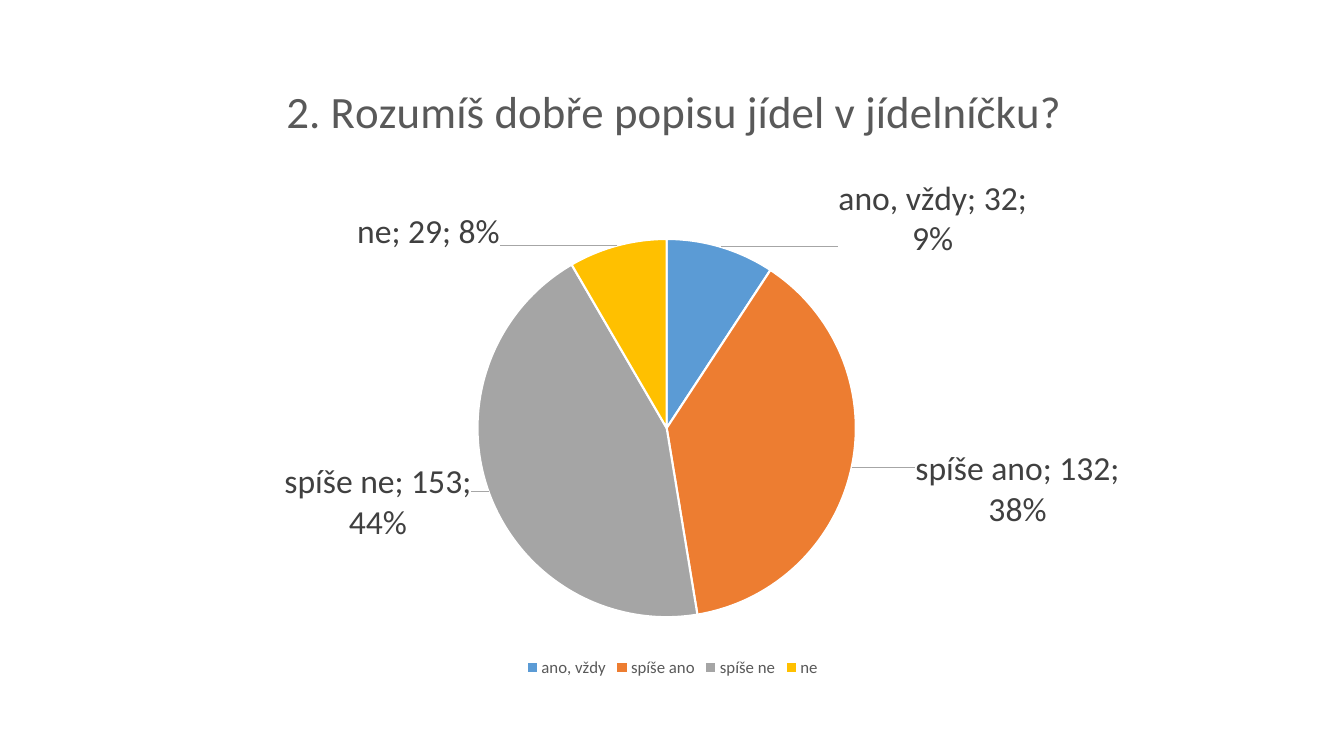
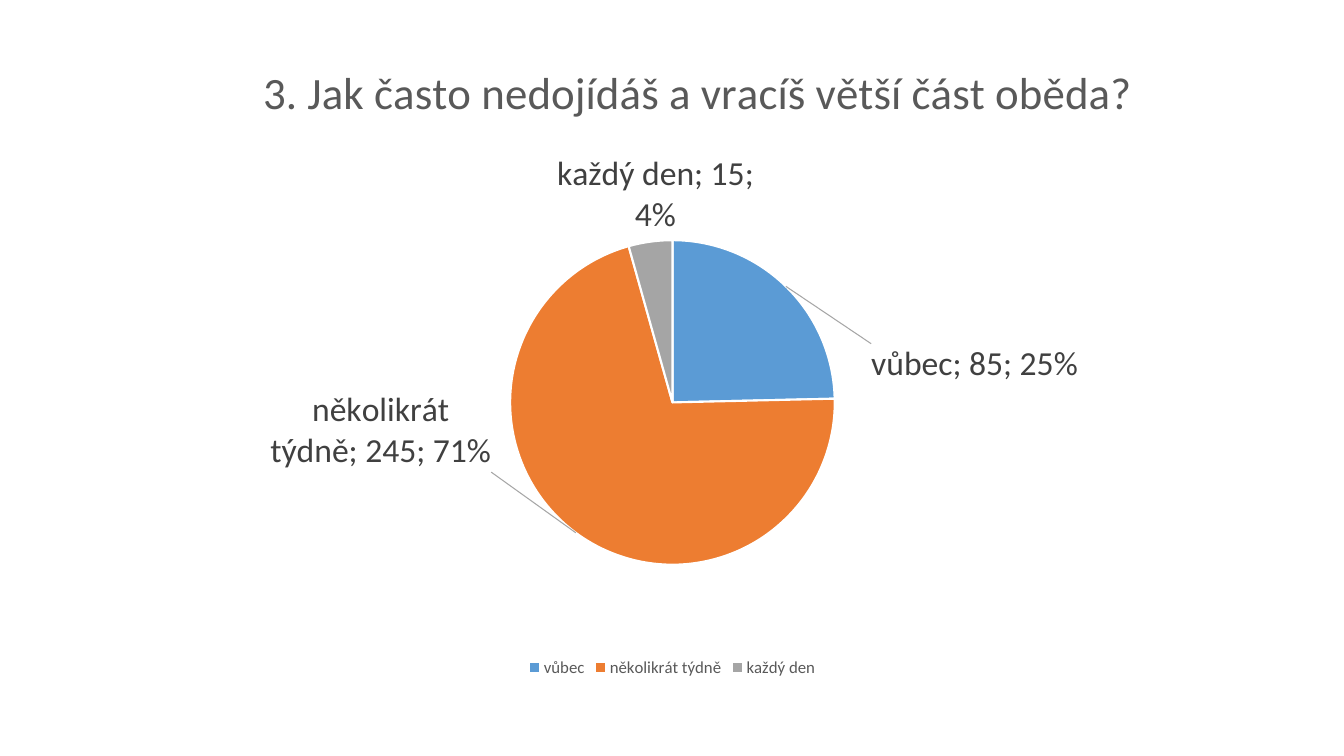
from lxml import etree
from pptx import Presentation
from pptx.chart.data import CategoryChartData
from pptx.dml.color import RGBColor
from pptx.enum.chart import XL_CHART_TYPE, XL_LABEL_POSITION, XL_LEGEND_POSITION
from pptx.oxml import parse_xml
from pptx.oxml.ns import nsdecls, qn
from pptx.util import Inches, Pt

PIE = XL_CHART_TYPE.PIE
OUTSIDE = XL_LABEL_POSITION.OUTSIDE_END
BOTTOM = XL_LEGEND_POSITION.BOTTOM

COLOURS = {"title": "595959", "label": "404040", "leader": "A6A6A6", "edge": "FFFFFF"}
SLICES = ["5B9BD5", "ED7D31", "A5A5A5", "FFC000"]
FONT = "Calibri"
SIZES = {"title": 32, "label": 24, "legend": 12}
WIDTH, HEIGHT = 13.33, 7.5
FRAME = (0.92, 0.4, 11.5, 6.36)
LABEL_FLAGS = {"showVal": 1, "showCatName": 1, "showSerName": 0, "showPercent": 1}

# All places are shares of the chart frame; each answer is
# (name, count, label shift across, label shift down).
QUESTIONS = [
    {
        "title": "2. Rozumíš dobře popisu jídel v jídelníčku?",
        "title_at": {"x": 0.16, "y": 0.05},
        "pie_at": {"x": 0.33, "y": 0.31, "w": 0.33, "h": 0.59},
        "answers": [
            ("ano, vždy", 32, 0.10, 0.03),
            ("spíše ano", 132, 0.05, -0.03),
            ("spíše ne", 153, -0.01, -0.05),
            ("ne", 29, -0.10, 0.02),
        ],
    },
    {
        "title": "3. Jak často nedojídáš a vracíš větší část oběda?",
        "title_at": {"x": 0.14, "y": 0.02},
        "pie_at": {"x": 0.36, "y": 0.31, "w": 0.28, "h": 0.51},
        "answers": [
            ("vůbec", 85, 0.07, 0.16),
            ("několikrát týdně", 245, -0.07, -0.23),
            ("každý den", 15, 0.09, 0),
        ],
    },
]


def place(parent, index, modes, shares):
    """Give a chart part a manual layout, as the child at the given index."""
    for old in parent.findall(qn("c:layout")):
        parent.remove(old)
    values = {**modes, **shares}
    items = "".join(f'<c:{tag} val="{value}"/>' for tag, value in values.items())
    parent.insert(index, parse_xml(
        f'<c:layout {nsdecls("c")}><c:manualLayout>{items}</c:manualLayout></c:layout>'))


class SurveyDeck:
    """Holds the deck, its text style and the current slide."""

    EDGE = {"xMode": "edge", "yMode": "edge"}

    def __init__(self):
        self.deck = Presentation()
        self.deck.slide_width, self.deck.slide_height = Inches(WIDTH), Inches(HEIGHT)
        self.slide = None

    def add_page(self):
        self.slide = self.deck.slides.add_slide(self.deck.slide_layouts[6])

    def style(self, font, role, colour):
        values = {"name": FONT, "size": Pt(SIZES[role]), "bold": False}
        for name, value in values.items():
            setattr(font, name, value)
        font.color.rgb = RGBColor.from_string(COLOURS[colour])

    def add_pie(self, question):
        names, counts, across, down = zip(*question["answers"])
        data = CategoryChartData()
        data.categories = names
        data.add_series(question["title"], counts)
        frame = self.slide.shapes.add_chart(PIE, *map(Inches, FRAME), data)
        chart = frame.chart
        plot = chart.plots[0]
        plot.vary_by_categories = True
        self.add_title(chart, question)
        self.add_legend(chart)
        plot_area = chart.element.find(".//" + qn("c:plotArea"))
        place(plot_area, 0, {"layoutTarget": "inner", **self.EDGE}, question["pie_at"])
        series = plot.series[0]
        self.paint_slices(series, len(names))
        self.add_labels(series, list(zip(across, down)))

    def add_title(self, chart, question):
        chart.has_title = True
        text_frame = chart.chart_title.text_frame
        text_frame.text = question["title"]
        self.style(text_frame.paragraphs[0].runs[0].font, "title", "title")
        title = chart.element.find(".//" + qn("c:title"))
        place(title, 1, self.EDGE, question["title_at"])

    def add_legend(self, chart):
        chart.has_legend = True
        chart.legend.position = BOTTOM
        chart.legend.include_in_layout = False
        self.style(chart.legend.font, "legend", "title")

    def paint_slices(self, series, count):
        for index, colour in enumerate(SLICES[:count]):
            look = series.points[index].format
            look.fill.solid()
            look.fill.fore_color.rgb = RGBColor.from_string(colour)
            look.line.color.rgb = RGBColor.from_string(COLOURS["edge"])
            look.line.width = Pt(1.5)

    def add_labels(self, series, shifts):
        """Label each slice outside the pie, shifted, with a leader line."""
        points = [series.points[index].data_label for index in range(len(shifts))]
        for labels in [series.data_labels, *points]:
            self.style(labels.font, "label", "label")
            labels.position = OUTSIDE
        group = series.data_labels._element
        singles = group.findall(qn("c:dLbl"))
        for single, (across, down) in zip(singles, shifts):
            place(single, 1, {}, {"x": across, "y": down})
        for element in [group, *singles]:
            for tag, value in LABEL_FLAGS.items():
                element.find(qn(f"c:{tag}")).set("val", str(value))
            separator = etree.Element(qn("c:separator"))
            separator.text = "; "
            element.find(qn("c:showBubbleSize")).addnext(separator)
        for body in group.iter(qn("a:bodyPr")):
            body.set("wrap", "square")
        self.add_leaders(group)

    def add_leaders(self, group):
        for old in group.findall(qn("c:showLeaderLines")):
            group.remove(old)
        show = etree.SubElement(group, qn("c:showLeaderLines"))
        show.set("val", "1")
        show.addnext(parse_xml(
            f'<c:leaderLines {nsdecls("c", "a")}><c:spPr><a:ln w="9525"><a:solidFill>'
            f'<a:srgbClr val="{COLOURS["leader"]}"/></a:solidFill></a:ln></c:spPr>'
            '</c:leaderLines>'))


def main():
    survey = SurveyDeck()
    for question in QUESTIONS:
        survey.add_page()
        survey.add_pie(question)
    survey.deck.save("out.pptx")


if __name__ == "__main__":
    main()
